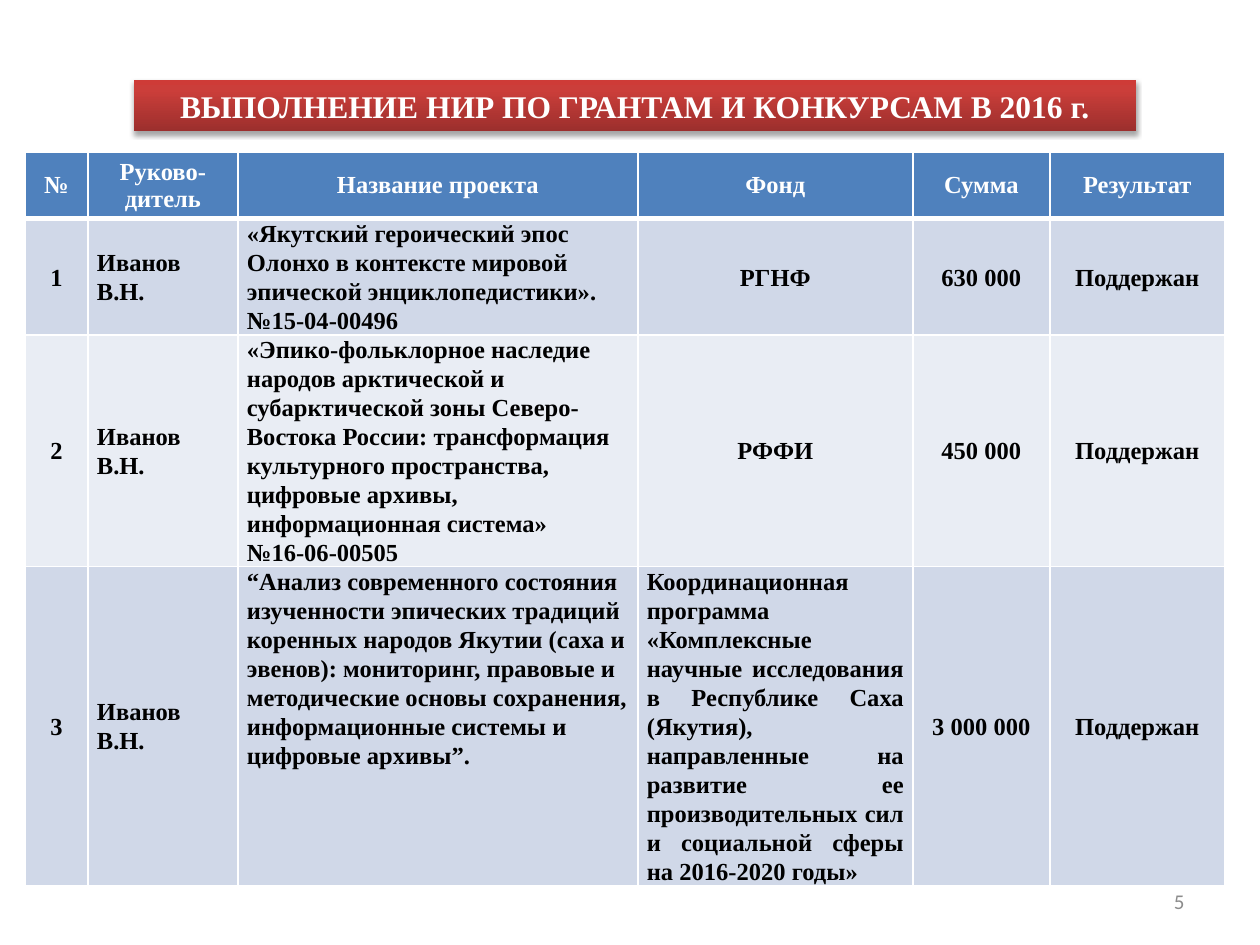
from copy import deepcopy

from lxml import etree
from pptx import Presentation, util as u
from pptx.dml.color import RGBColor
from pptx.enum import text as t
from pptx.oxml import ns

PX = 914400 // 126
SERIF = "Times New Roman"
LEFT, MID, JUST = t.PP_ALIGN.LEFT, t.PP_ALIGN.CENTER, t.PP_ALIGN.JUSTIFY
HEAD = ["№", "Руково-дитель", "Название проекта", "Фонд", "Сумма", "Результат"]
ROWS = [
    ["1", "Иванов В.Н.",
     "«Якутский героический эпос Олонхо в контексте мировой эпической "
     "энциклопедистики». №15-04-00496",
     "РГНФ", "630 000", "Поддержан"],
    ["2", "Иванов В.Н.",
     "«Эпико-фольклорное наследие народов арктической и субарктической зоны "
     "Северо-Востока России: трансформация культурного пространства, "
     "цифровые архивы, информационная система»\n№16-06-00505",
     "РФФИ", "450 000", "Поддержан"],
    ["3", "Иванов В.Н.",
     "“Анализ современного состояния изученности эпических традиций коренных "
     "народов Якутии (саха и эвенов): мониторинг, правовые и методические "
     "основы сохранения, информационные системы и цифровые архивы”.",
     "Координационная программа «Комплексные научные исследования в "
     "Республике Саха (Якутия), направленные на развитие ее производительных "
     "сил и социальной сферы на 2016-2020 годы»",
     "3 000 000", "Поддержан"],
]
WIDTHS = [63, 150, 400, 275, 137, 175]
HEIGHTS = [66, 116, 232, 318]
ALIGNS = [MID, LEFT, LEFT, MID, MID, MID]


def rgb(code):
    return RGBColor.from_string(code)


def write(frame, words, align, size, color, font=SERIF, bold=True, gap=1.0):
    """Fill a text frame, one paragraph for each line of words."""
    frame.text = words
    form = {"name": font, "size": u.Pt(size), "bold": bold}
    for para in frame.paragraphs:
        para.alignment, para.line_spacing = align, gap
        for run in para.runs:
            for key, value in form.items():
                setattr(run.font, key, value)
            run.font.color.rgb = rgb(color)


def place(shape, box):
    for key, value in zip(("left", "top", "width", "height"), box):
        setattr(shape, key, value * PX)


def edge(cell, low):
    """Draw white cell borders; low is the bottom width in points."""
    props = cell._tc.get_or_add_tcPr()
    for i, (side, wide) in enumerate(zip("LRTB", (1, 1, 1, low))):
        props.insert(i, etree.fromstring(
            f'<a:ln{side} {ns.nsdecls("a")} w="{u.Pt(wide)}"><a:solidFill>'
            f'<a:srgbClr val="FFFFFF"/></a:solidFill></a:ln{side}>'))


def banner(slide, box):
    title = slide.shapes.title
    place(title, box)
    frame = title.text_frame
    write(frame, "ВЫПОЛНЕНИЕ НИР ПО ГРАНТАМ И КОНКУРСАМ В 2016 г.",
          MID, 18, "FFFFFF")
    frame.auto_size = t.MSO_AUTO_SIZE.NONE
    frame.vertical_anchor = t.MSO_ANCHOR.MIDDLE
    # Red gradient, dark at the bottom
    title.fill.gradient()
    title.fill.gradient_angle = 90
    props = title._element.spPr
    stops = props.find(".//" + ns.qn("a:gsLst"))
    stops.append(deepcopy(stops[-1]))
    tones = [(0, "9C2F2D"), (0.8, "CB3E3A"), (1, "CE3B37")]
    for stop, (pos, code) in zip(title.fill.gradient_stops, tones):
        stop.position, stop.color.rgb = pos, rgb(code)
    title.line.fill.background()
    # Soft shadow below
    props.append(etree.fromstring(
        f'<a:effectLst {ns.nsdecls("a")}><a:outerShdw blurRad="{u.Pt(3.1)}" '
        f'dist="{u.Pt(1.8)}" dir="5400000" rotWithShape="0">'
        '<a:srgbClr val="000000"><a:alpha val="35000"/></a:srgbClr>'
        '</a:outerShdw></a:effectLst>'))


def grants(slide, left, top):
    grid = slide.shapes.add_table(
        len(ROWS) + 1, len(HEAD), left * PX, top * PX,
        sum(WIDTHS) * PX, sum(HEIGHTS) * PX).table
    for col, wide in zip(grid.columns, WIDTHS):
        col.width = wide * PX
    for row, high in zip(grid.rows, HEIGHTS):
        row.height = high * PX
    for r, line in enumerate([HEAD] + ROWS):
        for c, words in enumerate(line):
            cell = grid.cell(r, c)
            cell.fill.solid()
            cell.vertical_anchor = t.MSO_ANCHOR.MIDDLE
            if r == 0:
                tone = "4F81BD"
                write(cell.text_frame, words, MID, 14, "FFFFFF")
            else:
                tone = "D0D8E8" if r % 2 else "E9EDF4"
                align = JUST if (r, c) == (3, 3) else ALIGNS[c]
                write(cell.text_frame, words, align, 14, "000000", gap=1.07)
                cell.margin_left = cell.margin_right = 9 * PX
                cell.margin_top = cell.margin_bottom = 0
                if c == 2:
                    cell.vertical_anchor = t.MSO_ANCHOR.TOP
            cell.fill.fore_color.rgb = rgb(tone)
            edge(cell, 1 if r else 3)


def number(slide, box):
    frame = slide.shapes.add_textbox(*(v * PX for v in box)).text_frame
    frame.word_wrap = True
    frame.vertical_anchor = t.MSO_ANCHOR.MIDDLE
    write(frame, "5", t.PP_ALIGN.RIGHT, 12, "8C8C8C", "Calibri", False)


def main():
    deck = Presentation()
    deck.slide_width, deck.slide_height = u.Inches(10), u.Inches(7.5)
    slide = deck.slides.add_slide(deck.slide_layouts[5])
    grants(slide, 25, 152)
    banner(slide, (134, 80, 1002, 51))
    number(slide, (903, 876, 294, 50))
    deck.save("out.pptx")


if __name__ == "__main__":
    main()
